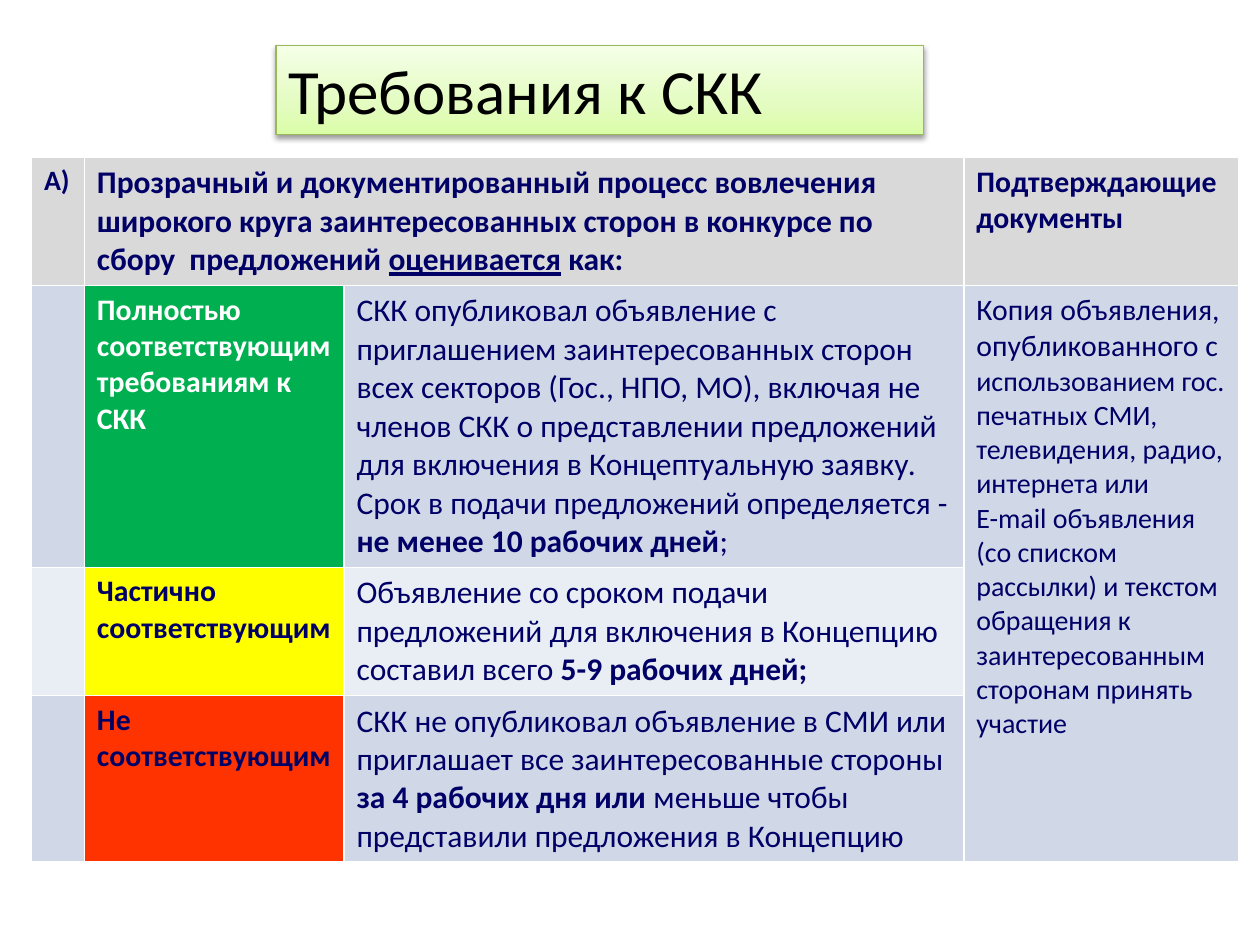
from dataclasses import dataclass

from lxml.etree import fromstring
from pptx import Presentation
from pptx.dml.color import RGBColor
from pptx.enum.shapes import MSO_SHAPE as Shape
from pptx.enum.text import MSO_ANCHOR as Anchor, PP_ALIGN as Align
from pptx.oxml.ns import nsdecls
from pptx.util import Inches, Pt

NAVY = RGBColor(0x00, 0x00, 0x66)
WHITE = RGBColor(0xFF, 0xFF, 0xFF)
BLACK = RGBColor(0x00, 0x00, 0x00)
GRAY = RGBColor(0xD9, 0xD9, 0xD9)
BAND = RGBColor(0xD0, 0xD8, 0xE8)
PALE = RGBColor(0xE9, 0xED, 0xF4)
GREEN = RGBColor(0x00, 0xB0, 0x50)
YELLOW = RGBColor(0xFF, 0xFF, 0x00)
RED = RGBColor(0xFF, 0x33, 0x00)
OLIVE = RGBColor(0x98, 0xB9, 0x55)
TITLE_STOPS = ((0, "DAFDA7"), (35, "E4FCC2"), (100, "F5FFE7"))

FONT = "Calibri"
COLS = (0.42, 2.06, 4.92, 2.18)
ROWS = (1.01, 2.2, 1.02, 1.32)


@dataclass(frozen=True)
class Run:
    text: str
    size: int = 18
    bold: bool = False
    underline: bool = False


@dataclass(frozen=True)
class Cell:
    row: int
    col: int
    fill: RGBColor
    paragraphs: tuple[tuple[Run, ...], ...] = ()
    color: RGBColor = NAVY
    rows: int = 1
    cols: int = 1


CELLS = (
    Cell(0, 0, GRAY, ((Run("А)", 16, True),),)),
    Cell(0, 1, GRAY, ((
        Run("Прозрачный и документированный процесс вовлечения широкого круга "
            "заинтересованных сторон в конкурсе по сбору  предложений ", bold=True),
        Run("оценивается", bold=True, underline=True),
        Run(" как:", bold=True)),), cols=2),
    Cell(0, 3, GRAY, ((Run("Подтверждающие документы", 17, True),),)),
    Cell(1, 0, BAND),
    Cell(1, 1, GREEN, ((Run("Полностью соответствующим", 17, True),),
                       (Run("требованиям к СКК", 17, True),)), WHITE),
    Cell(1, 2, BAND, ((
        Run("СКК опубликовал объявление с приглашением заинтересованных сторон всех "
            "секторов (Гос., НПО, МО), включая не членов СКК о представлении предложений "
            "для включения в Концептуальную заявку. Срок в подачи предложений "
            "определяется - "),
        Run("не менее 10 рабочих дней", bold=True),
        Run(";")),)),
    Cell(1, 3, BAND, ((
        Run("Копия объявления, опубликованного с ", 17),
        Run("использованием гос. печатных СМИ, телевидения, радио, интернета или\n"
            "E-mail объявления (со списком рассылки) и текстом обращения к "
            "заинтересованным сторонам принять участие", 16)),), rows=3),
    Cell(2, 0, PALE),
    Cell(2, 1, YELLOW, ((Run("Частично соответствующим", 17, True),),)),
    Cell(2, 2, PALE, ((
        Run("Объявление со сроком подачи предложений для включения в Концепцию "
            "составил всего "),
        Run("5-9 рабочих дней;", bold=True)),)),
    Cell(3, 0, BAND),
    Cell(3, 1, RED, ((Run("Не соответствующим", 17, True),),)),
    Cell(3, 2, BAND, ((
        Run("СКК не опубликовал объявление в СМИ или приглашает все "
            "заинтересованные стороны "),
        Run("за 4 рабочих дня или ", bold=True),
        Run("меньше чтобы представили предложения в Концепцию")),)),
)


def add_runs(p, runs: tuple[Run, ...], color: RGBColor) -> None:
    """Write formatted runs into a paragraph, breaking lines at newlines."""
    p.font.name = FONT
    p.font.color.rgb = color
    for run in runs:
        for i, line in enumerate(run.text.split("\n")):
            if i:
                p.add_line_break()
            r = p.add_run()
            r.text = line
            r.font.name = FONT
            r.font.color.rgb = color
            r.font.size = Pt(run.size)
            r.font.bold = run.bold
            r.font.underline = run.underline


def draw_cell(table, spec_cell: Cell) -> None:
    """Merge, fill and write one table cell."""
    row, col = spec_cell.row, spec_cell.col
    cell = table.cell(row, col)
    if spec_cell.rows * spec_cell.cols > 1:
        cell.merge(table.cell(row + spec_cell.rows - 1, col + spec_cell.cols - 1))
    cell.fill.solid()
    cell.fill.fore_color.rgb = spec_cell.fill
    tf = cell.text_frame
    for i, runs in enumerate(spec_cell.paragraphs):
        p = tf.add_paragraph() if i else tf.paragraphs[0]
        add_runs(p, runs, spec_cell.color)


def add_requirements(slide) -> None:
    """Add the requirements table."""
    table = slide.shapes.add_table(
        len(ROWS), len(COLS), Inches(0.25), Inches(1.25),
        Inches(sum(COLS)), Inches(sum(ROWS))).table
    for column, width in zip(table.columns, COLS):
        column.width = Inches(width)
    for row, height in zip(table.rows, ROWS):
        row.height = Inches(height)
    for cell in CELLS:
        draw_cell(table, cell)


def add_title(slide, text: str) -> None:
    """Add the title box with its gradient and soft shadow."""
    sp = slide.shapes.add_shape(
        Shape.RECTANGLE, Inches(2.19), Inches(0.36), Inches(5.14), Inches(0.71))
    sp.line.color.rgb = OLIVE
    sp.line.width = Pt(0.75)
    stops = "".join(f'<a:gs pos="{pos * 1000}"><a:srgbClr val="{color}"/></a:gs>'
                    for pos, color in TITLE_STOPS)
    props = sp.element.spPr
    props.find(".//{*}prstGeom").addnext(fromstring(
        f'<a:gradFill {nsdecls("a")} rotWithShape="1"><a:gsLst>{stops}</a:gsLst>'
        '<a:lin ang="16200000" scaled="1"/></a:gradFill>'))
    props.append(fromstring(
        f'<a:effectLst {nsdecls("a")}><a:outerShdw blurRad="{Pt(3.1)}" '
        f'dist="{Pt(1.6)}" dir="5400000" rotWithShape="0"><a:srgbClr val="000000">'
        '<a:alpha val="38000"/></a:srgbClr></a:outerShdw></a:effectLst>'))
    tf = sp.text_frame
    tf.word_wrap = True
    tf.vertical_anchor = Anchor.TOP
    p = tf.paragraphs[0]
    p.text = text
    p.alignment = Align.LEFT
    p.font.name = FONT
    p.font.size = Pt(36)
    p.font.color.rgb = BLACK


def main() -> None:
    """Build and save the slide."""
    prs = Presentation()
    prs.slide_width, prs.slide_height = Inches(10), Inches(7.5)
    s = prs.slides.add_slide(prs.slide_layouts[6])
    add_requirements(s)
    add_title(s, "Требования к СКК")
    prs.save("out.pptx")


if __name__ == "__main__":
    main()
